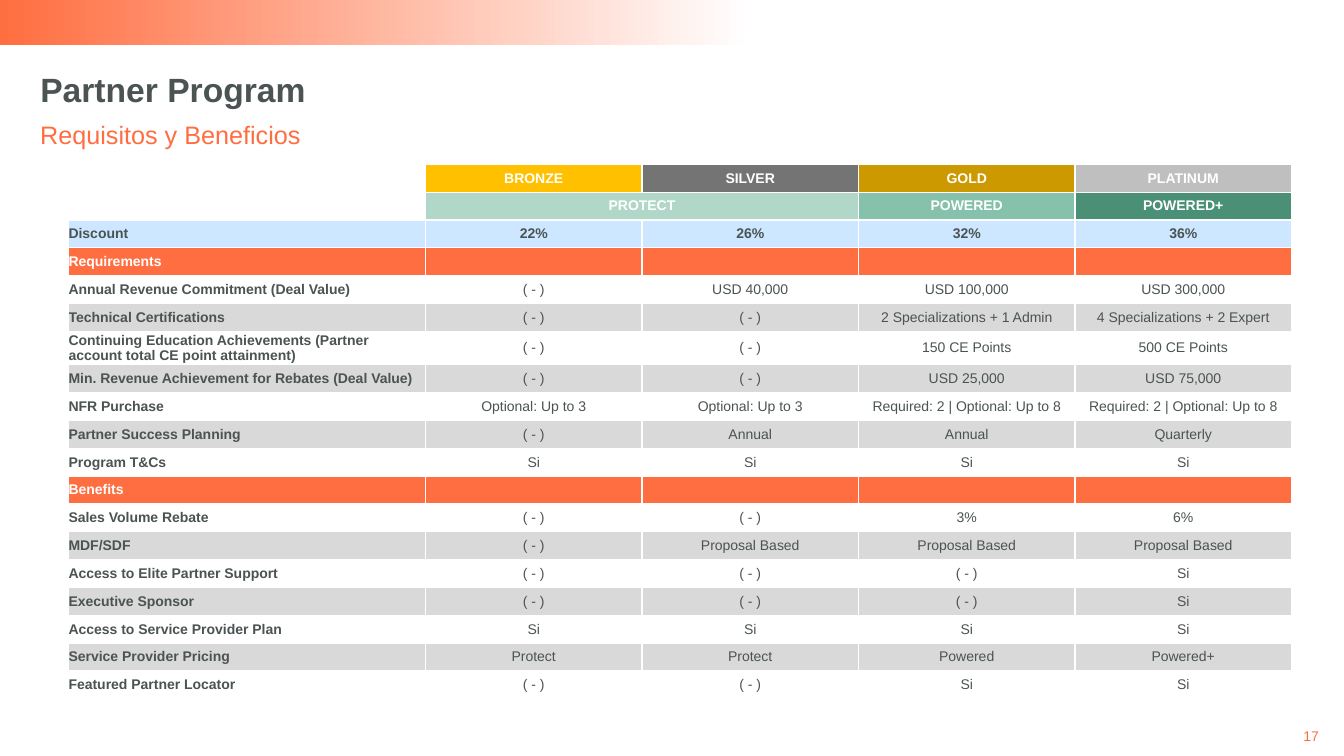
from dataclasses import dataclass

from lxml import etree
from pptx import Presentation
from pptx.dml.color import RGBColor
from pptx.enum.shapes import MSO_SHAPE
from pptx.enum.text import MSO_ANCHOR, PP_ALIGN
from pptx.oxml.ns import qn
from pptx.util import Inches, Pt

LEFT, CENTER, RIGHT = PP_ALIGN.LEFT, PP_ALIGN.CENTER, PP_ALIGN.RIGHT
TOP, MIDDLE = MSO_ANCHOR.TOP, MSO_ANCHOR.MIDDLE
RECTANGLE = MSO_SHAPE.RECTANGLE

# Content
TITLE = "Partner Program"
SUBTITLE = "Requisitos y Beneficios"
PAGE = "17"
NONE = "( - )"
OPTIONAL = "Optional: Up to 3"
REQUIRED = "Required: 2 | Optional: Up to 8"
TIERS = [("BRONZE", "FFC000"), ("SILVER", "747474"),
         ("GOLD", "CC9900"), ("PLATINUM", "BFBFBF")]
LEVELS = [("PROTECT", "B1D7C9"), ("", "B1D7C9"),
          ("POWERED", "86C1AB"), ("POWERED+", "4A9076")]
DISCOUNT = ("Discount", "22%", "26%", "32%", "36%")
LONG_LABEL = "Continuing Education Achievements (Partner account total CE point attainment)"
SECTIONS = {
    "Requirements": [
        ("Annual Revenue Commitment (Deal Value)", NONE, "USD 40,000", "USD 100,000", "USD 300,000"),
        ("Technical Certifications", NONE, NONE,
         "2 Specializations + 1 Admin", "4 Specializations + 2 Expert"),
        (LONG_LABEL, NONE, NONE, "150 CE Points", "500 CE Points"),
        ("Min. Revenue Achievement for Rebates (Deal Value)", NONE, NONE, "USD 25,000", "USD 75,000"),
        ("NFR Purchase", OPTIONAL, OPTIONAL, REQUIRED, REQUIRED),
        ("Partner Success Planning", NONE, "Annual", "Annual", "Quarterly"),
        ("Program T&Cs", "Si", "Si", "Si", "Si"),
    ],
    "Benefits": [
        ("Sales Volume Rebate", NONE, NONE, "3%", "6%"),
        ("MDF/SDF", NONE, "Proposal Based", "Proposal Based", "Proposal Based"),
        ("Access to Elite Partner Support", NONE, NONE, NONE, "Si"),
        ("Executive Sponsor", NONE, NONE, NONE, "Si"),
        ("Access to Service Provider Plan", "Si", "Si", "Si", "Si"),
        ("Service Provider Pricing", "Protect", "Protect", "Powered", "Powered+"),
        ("Featured Partner Locator", NONE, NONE, "Si", "Si"),
    ],
}


@dataclass(frozen=True)
class Theme:
    font: str = "Arial"
    ink: str = "4B5353"
    accent: str = "FF6E41"
    white: str = "FFFFFF"
    band: str = "D9D9D9"
    discount: str = "CCE7FF"
    title_size: int = 24
    subtitle_size: int = 18
    small_size: int = 10


THEME = Theme()


def write(frame, text, size, color, bold=False, align=LEFT, inset=0.0, anchor=TOP):
    frame.text = text
    frame.word_wrap = True
    frame.vertical_anchor = anchor
    frame.margin_left = frame.margin_right = Inches(inset)
    frame.margin_top = frame.margin_bottom = Inches(inset / 2)
    style(frame.paragraphs[0], size, color, bold, align)


def style(paragraph, size, color, bold, align):
    paragraph.alignment = align
    for run in paragraph.runs:
        run.font.name = THEME.font
        run.font.size = Pt(size)
        run.font.bold = bold
        run.font.color.rgb = RGBColor.from_string(color)


def add_borders(cell):
    properties = cell._tc.get_or_add_tcPr()
    for side in ("a:lnL", "a:lnR", "a:lnT", "a:lnB"):
        line = etree.SubElement(properties, qn(side), w=str(Pt(1)))
        solid = etree.SubElement(line, qn("a:solidFill"))
        etree.SubElement(solid, qn("a:srgbClr"), val=THEME.white)


def format_cell(cell, text, fill, color, bold, align):
    cell.text = text
    cell.vertical_anchor = MIDDLE
    cell.margin_left = cell.margin_right = cell.margin_top = cell.margin_bottom = 0
    add_borders(cell)
    if fill:
        cell.fill.solid()
        cell.fill.fore_color.rgb = RGBColor.from_string(fill)
    else:
        cell.fill.background()
    paragraph = cell.text_frame.paragraphs[0]
    style(paragraph, THEME.small_size, color, bold, align)
    # Empty cells need the small size too, or they stretch their row
    paragraph._p.get_or_add_endParaRPr().set("sz", str(THEME.small_size * 100))


def table_rows():
    """Return (texts, fills, text colour, bold values) for each row."""
    rows = []
    for heads in (TIERS, LEVELS):
        texts, fills = zip(*heads)
        rows.append((("", *texts), (None, *fills), THEME.white, True))
    rows.append((DISCOUNT, [THEME.discount] * 5, THEME.ink, True))
    for section, lines in SECTIONS.items():
        rows.append(((section, "", "", "", ""), [THEME.accent] * 5, THEME.white, True))
        for i, line in enumerate(lines):
            rows.append((line, [THEME.band if i % 2 else None] * 5, THEME.ink, False))
    return rows


def add_program_table(slide):
    rows = table_rows()
    width, label_width = Inches(12.13), Inches(3.54)
    tier_width = (width - label_width) // len(TIERS)
    height, long_height = Inches(5.3), Inches(0.33)
    table = slide.shapes.add_table(len(rows), 5, Inches(0.68), Inches(1.63),
                                   width, height).table
    table.first_row = table.horz_banding = False
    for i, column in enumerate(table.columns):
        column.width = tier_width if i else label_width
    row_height = (height - long_height) // (len(rows) - 1)
    for r, (texts, fills, color, bold) in enumerate(rows):
        table.rows[r].height = long_height if texts[0] == LONG_LABEL else row_height
        for c, (text, fill) in enumerate(zip(texts, fills)):
            format_cell(table.cell(r, c), text, fill, color,
                        bold or c == 0, CENTER if c else LEFT)
    # PROTECT covers the two lower tiers
    table.cell(1, 1).merge(table.cell(1, 2))


def main():
    deck = Presentation()
    deck.slide_width, deck.slide_height = Inches(13.33), Inches(7.5)
    slide = deck.slides.add_slide(deck.slide_layouts[5])

    # Top banner, fading to white on the right
    banner = slide.shapes.add_shape(RECTANGLE, 0, 0, deck.slide_width, Inches(0.45))
    banner.shadow.inherit = False
    banner.line.fill.background()
    banner.fill.gradient()
    banner.fill.gradient_angle = 180
    stops = ((0.44, THEME.white), (1, THEME.accent))
    for stop, (position, color) in zip(banner.fill.gradient_stops, stops):
        stop.position = position
        stop.color.rgb = RGBColor.from_string(color)

    # Title and subtitle
    title = slide.shapes.title
    title.left, title.top = Inches(0.3), Inches(0.63)
    title.width, title.height = Inches(4.75), Inches(0.5)
    write(title.text_frame, TITLE, THEME.title_size, THEME.ink, bold=True, inset=0.1)
    subtitle = slide.shapes.add_textbox(Inches(0.3), Inches(1.13), Inches(3.83), Inches(0.4))
    write(subtitle.text_frame, SUBTITLE, THEME.subtitle_size, THEME.accent, inset=0.1)

    # Requirements and benefits by tier
    add_program_table(slide)

    # Page number
    page = slide.shapes.add_textbox(Inches(12.34), Inches(7.2), Inches(0.74), Inches(0.2))
    write(page.text_frame, PAGE, THEME.small_size, THEME.accent, align=RIGHT, anchor=MIDDLE)

    deck.save("out.pptx")


if __name__ == "__main__":
    main()
